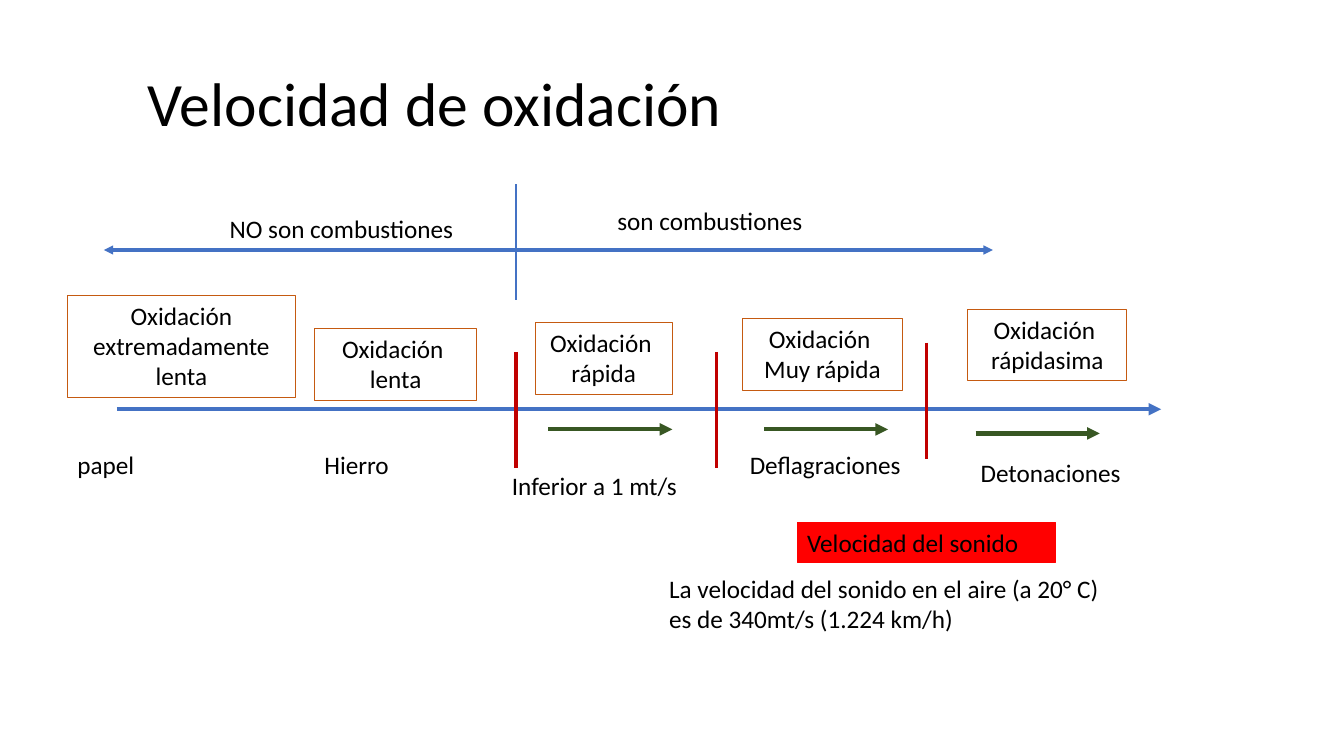
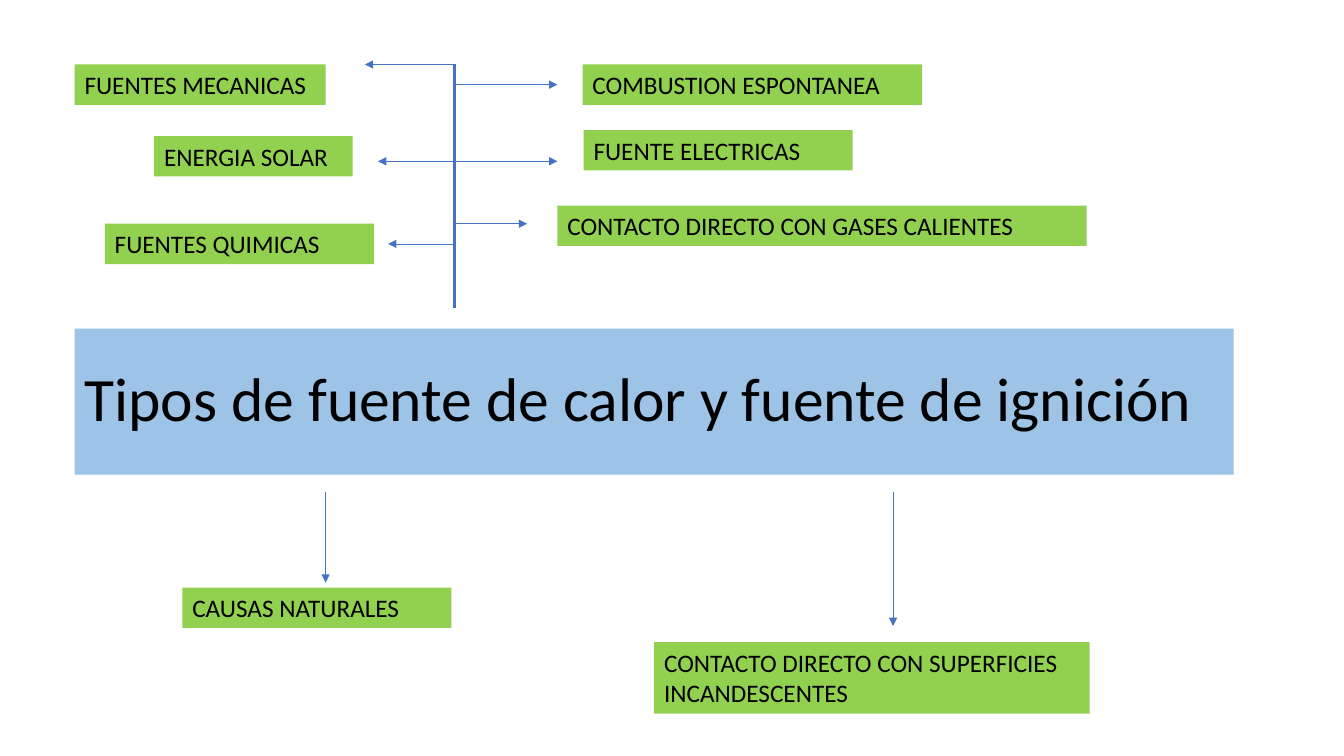
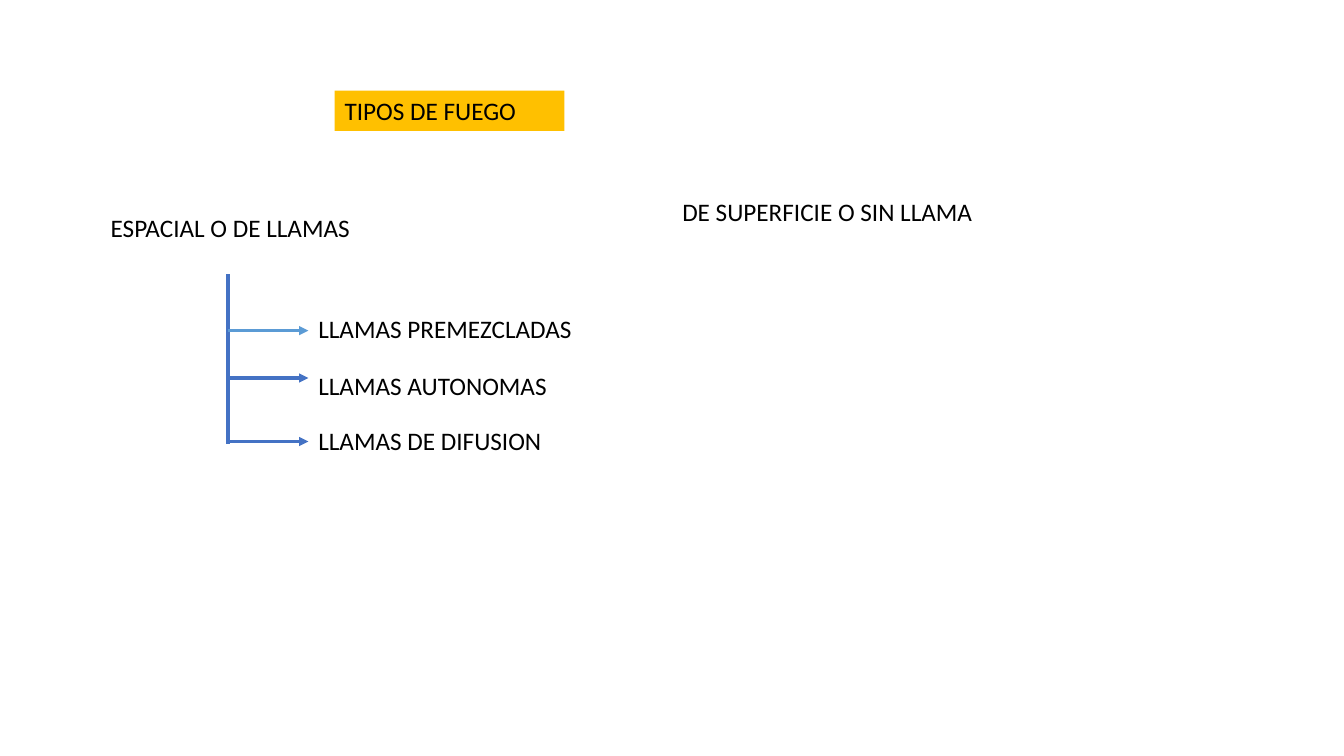
import pptx
import pptx.util
import pptx.dml.color
import pptx.enum.shapes
import pptx.enum.text
import pptx.oxml.ns
from lxml import etree

PX = 9144  # 100 px to the inch
FONT = "Calibri"
BLACK, BLUE, LIGHT_BLUE, PALE_BLUE = "000000", "4472C4", "5B9BD5", "9DC3E6"
ORANGE, DARK_RED, DARK_GREEN = "C55A11", "C00000", "385723"
RED, GREEN, AMBER = "FF0000", "92D050", "FFC000"
LINE_H, TWO_LINES_H = 40, 71
TITLE_W, TITLE_H = 1150, 145

rgb = pptx.dml.color.RGBColor.from_string
qn = pptx.oxml.ns.qn
PP_ALIGN = pptx.enum.text.PP_ALIGN
MSO_ANCHOR = pptx.enum.text.MSO_ANCHOR


def add_text(s, text, x, y, w, h=LINE_H, fill=None, border=None, centred=False, title=False):
    """Add black text in a box; a title is larger and vertically centred."""
    sp = s.shapes.add_textbox(x * PX, y * PX, w * PX, h * PX)
    if fill:
        sp.fill.solid()
        sp.fill.fore_color.rgb = rgb(fill)
    if border:
        sp.line.color.rgb = rgb(border)
        sp.line.width = pptx.util.Pt(0.75)
    tf = sp.text_frame
    tf.word_wrap = True
    tf.vertical_anchor = MSO_ANCHOR.MIDDLE if title else MSO_ANCHOR.TOP
    tf.text = text
    for p in tf.paragraphs:
        p.alignment = PP_ALIGN.CENTER if centred else PP_ALIGN.LEFT
        if title:
            p.line_spacing = 0.9
        for r in p.runs:
            r.font.name = FONT
            r.font.size = pptx.util.Pt(44 if title else 18)
            r.font.color.rgb = rgb(BLACK)


def add_line(s, x1, y1, x2, y2, color, width, arrows=()):
    """Draw a straight line; arrows names the ends with a triangle: headEnd, tailEnd."""
    c = s.shapes.add_connector(pptx.enum.shapes.MSO_CONNECTOR.STRAIGHT,
                               x1 * PX, y1 * PX, x2 * PX, y2 * PX)
    c.line.color.rgb = rgb(color)
    c.line.width = pptx.util.Pt(width)
    ln = c.line._get_or_add_ln()
    for end in arrows:
        etree.SubElement(ln, qn("a:" + end)).set("type", "triangle")
    etree.SubElement(c._element.spPr, qn("a:effectLst"))


TO_END = ("tailEnd",)
BOTH_ENDS = ("headEnd", "tailEnd")

prs = pptx.Presentation()
prs.slide_width, prs.slide_height = 12192000, 6858000
blank = prs.slide_layouts[6]

# Oxidation speed
s = prs.slides.add_slide(blank)
add_text(s, "Velocidad de oxidación", 137, 33, TITLE_W, TITLE_H, title=True)

add_line(s, 116, 406, 1152, 406, BLUE, 3, TO_END)
add_line(s, 512, 183, 512, 298, BLUE, 1.5)
add_line(s, 103, 248, 985, 248, BLUE, 2.25, BOTH_ENDS)

for text, x, y, w, h in [
    ("Oxidación extremadamente lenta", 67, 293, 226, 101),
    ("Oxidación \nlenta", 312, 326, 161, TWO_LINES_H),
    ("Oxidación \nrápida", 531, 320, 136, TWO_LINES_H),
    ("Oxidación \nMuy rápida", 737, 316, 158, TWO_LINES_H),
    ("Oxidación \nrápidasima", 960, 307, 158, TWO_LINES_H),
]:
    add_text(s, text, x, y, w, h, border=ORANGE, centred=True)

for x, y in [(512, 349), (711, 349), (919, 340)]:
    add_line(s, x, y, x, y + 115, DARK_RED, 2.25)
for x, y in [(544, 426), (758, 426), (968, 430)]:
    add_line(s, x, y, x + 123, y, DARK_GREEN, 3, TO_END)

for text, x, y, w in [
    ("NO son combustiones", 218, 207, 256),
    (" son combustiones", 597, 199, 256),
    ("papel", 67, 441, 98),
    ("Hierro", 312, 441, 134),
    ("Inferior a 1 mt/s", 498, 462, 256),
    ("Deflagraciones", 734, 441, 256),
    ("Detonaciones", 963, 449, 256),
]:
    add_text(s, text, x, y, w)
add_text(s, "Velocidad del sonido", 791, 518, 256, fill=RED, border=RED)
add_text(s, "La velocidad del sonido en el aire (a 20° C) es de 340mt/s (1.224 km/h)",
         654, 564, 467, TWO_LINES_H)

# Heat and ignition sources
s = prs.slides.add_slide(blank)
add_text(s, "Tipos de fuente de calor y fuente de ignición", 74, 326, TITLE_W, TITLE_H,
         fill=PALE_BLUE, title=True)

trunk_x = 451
add_line(s, trunk_x, 64, trunk_x, 306, BLUE, 2.25)
for x, y in [(362, 64), (375, 160), (385, 242), (553, 84), (553, 160), (523, 222)]:
    add_line(s, trunk_x, y, x, y, BLUE, 0.5, TO_END)
for x, y in [(323, 578), (886, 621)]:
    add_line(s, x, 488, x, y, BLUE, 0.5, TO_END)

for text, x, y, w, h in [
    ("FUENTES MECANICAS", 74, 64, 249, LINE_H),
    ("ENERGIA SOLAR", 153, 135, 197, LINE_H),
    ("FUENTES QUIMICAS", 104, 222, 267, LINE_H),
    ("COMBUSTION ESPONTANEA", 578, 64, 337, LINE_H),
    ("FUENTE ELECTRICAS", 579, 129, 267, LINE_H),
    ("CONTACTO DIRECTO CON GASES CALIENTES", 553, 204, 525, LINE_H),
    ("CAUSAS NATURALES", 181, 583, 267, LINE_H),
    ("CONTACTO DIRECTO CON SUPERFICIES INCANDESCENTES", 649, 637, 432, TWO_LINES_H),
]:
    add_text(s, text, x, y, w, h, fill=GREEN)

# Kinds of fire
s = prs.slides.add_slide(blank)
add_text(s, "TIPOS DE FUEGO", 332, 90, 228, fill=AMBER)
add_text(s, "ESPACIAL O DE LLAMAS", 100, 206, 292)
add_text(s, "DE SUPERFICIE O SIN LLAMA", 667, 190, 398)

trunk_x, label_x = 226, 306
add_line(s, trunk_x, 272, trunk_x, 440, BLUE, 3)
for text, arrow_y, text_y, color in [
    ("LLAMAS PREMEZCLADAS", 328, 306, LIGHT_BLUE),
    ("LLAMAS AUTONOMAS", 375, 362, BLUE),
    ("LLAMAS DE DIFUSION", 438, 417, BLUE),
]:
    add_line(s, trunk_x, arrow_y, label_x, arrow_y, color, 2.25, TO_END)
    add_text(s, text, label_x, text_y, 398)

prs.save("out.pptx")
